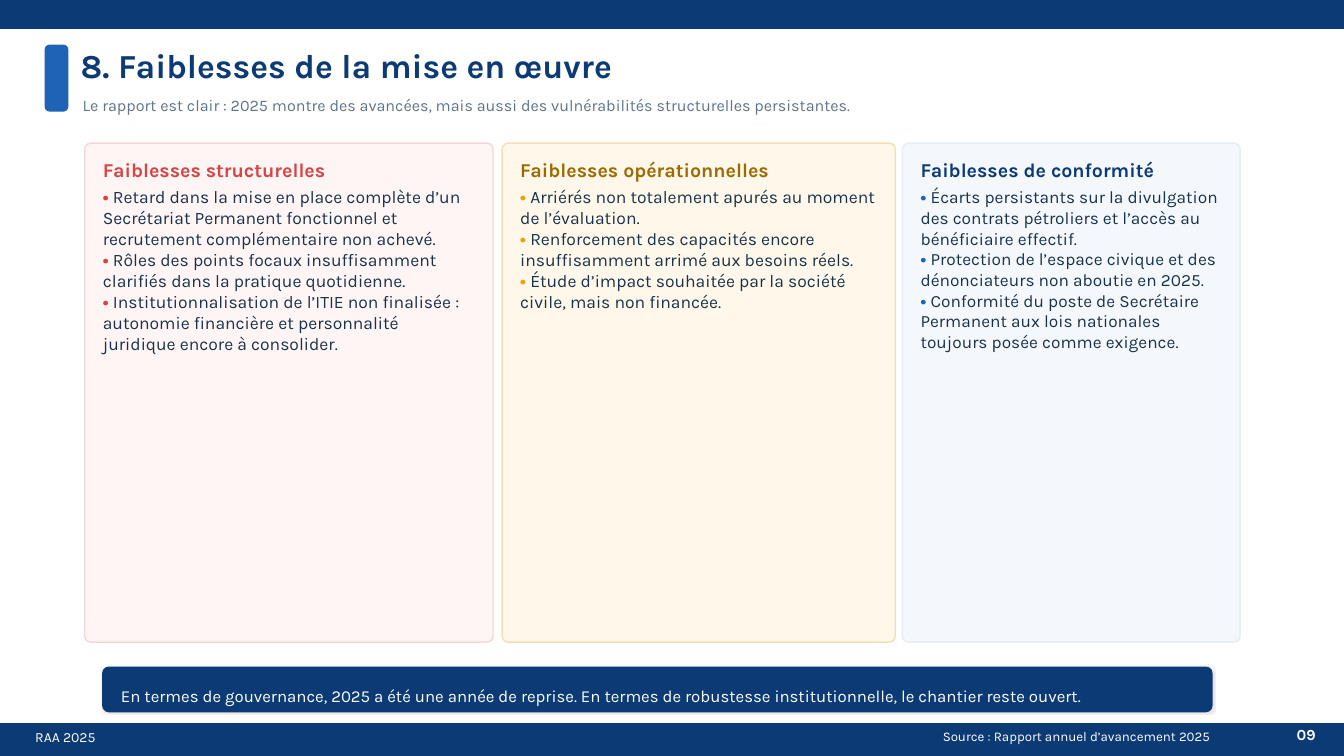
from dataclasses import dataclass

import lxml.etree
import pptx
import pptx.dml.color
import pptx.enum.shapes
import pptx.enum.text
import pptx.oxml.ns
import pptx.util

CELL = pptx.util.Inches(0.1)
COLUMNS, ROWS = 133.3, 75
PADDING = 1.8
CARD_TOP, CARD_ROWS = 14.2, 49.5
CORNER = 0.6
FONT = "Karla"

COLORS = {
    "navy": "0B3A74",
    "blue": "1E63B5",
    "white": "FFFFFF",
    "slate": "5E748B",
    "ink": "18324A",
    "red": "D64545",
    "rose": "FFF5F5",
    "rose_edge": "F5D7D7",
    "brown": "9C6A00",
    "amber": "F29F05",
    "cream": "FFF8EA",
    "cream_edge": "F2E0B3",
    "ice": "F4F8FD",
    "ice_edge": "E6EDF5",
}


@dataclass(frozen=True)
class Area:
    column: float
    row: float
    columns: float
    rows: float

    def emu(self) -> list[int]:
        return [round(n * CELL) for n in (self.column, self.row, self.columns, self.rows)]


@dataclass(frozen=True)
class Card:
    column: float
    columns: float
    heading: str
    points: tuple[str, ...]
    heading_color: str
    bullet_color: str
    fill: str
    edge: str
    size: float = 12.5


CARDS = (
    Card(8.4, 40.5, "Faiblesses structurelles", (
        "Retard dans la mise en place complète d’un Secrétariat Permanent fonctionnel "
        "et recrutement complémentaire non achevé.",
        "Rôles des points focaux insuffisamment clarifiés dans la pratique quotidienne.",
        "Institutionnalisation de l’ITIE non finalisée : autonomie financière et "
        "personnalité juridique encore à consolider.",
    ), "red", "red", "rose", "rose_edge"),
    Card(49.8, 39, "Faiblesses opérationnelles", (
        "Arriérés non totalement apurés au moment de l’évaluation.",
        "Renforcement des capacités encore insuffisamment arrimé aux besoins réels.",
        "Étude d’impact souhaitée par la société civile, mais non financée.",
    ), "brown", "amber", "cream", "cream_edge"),
    Card(89.5, 33.5, "Faiblesses de conformité", (
        "Écarts persistants sur la divulgation des contrats pétroliers et l’accès au "
        "bénéficiaire effectif.",
        "Protection de l’espace civique et des dénonciateurs non aboutie en 2025.",
        "Conformité du poste de Secrétaire Permanent aux lois nationales toujours posée "
        "comme exigence.",
    ), "navy", "blue", "ice", "ice_edge", 12.3),
)


def rgb(name: str) -> pptx.dml.color.RGBColor:
    return pptx.dml.color.RGBColor.from_string(COLORS[name])


def add_panel(slide, area: Area, fill: str, edge: str = "", corner: float = 0):
    kinds = pptx.enum.shapes.MSO_SHAPE
    panel = slide.shapes.add_shape(
        kinds.ROUNDED_RECTANGLE if corner else kinds.RECTANGLE, *area.emu())
    if corner:
        panel.adjustments[0] = corner / min(area.columns, area.rows)
    panel.shadow.inherit = False
    panel.fill.solid()
    panel.fill.fore_color.rgb = rgb(fill)
    panel.line.color.rgb = rgb(edge or fill)
    panel.line.width = pptx.util.Pt(1)
    return panel


def add_soft_shadow(panel) -> None:
    qn = pptx.oxml.ns.qn
    effects = panel._element.spPr.find(qn("a:effectLst"))
    shadow = lxml.etree.SubElement(
        effects, qn("a:outerShdw"), blurRad=str(pptx.util.Pt(1.5)),
        dist=str(pptx.util.Pt(0.5)), dir=str(45 * 60000), rotWithShape="0")
    tint = lxml.etree.SubElement(shadow, qn("a:srgbClr"), val="000000")
    lxml.etree.SubElement(tint, qn("a:alpha"), val="12000")


def add_text(slide, area: Area, *lines: str, size: float, color: str, bold: bool = False,
             right: bool = False, middle: bool = True, bullet: str = "") -> None:
    frame = slide.shapes.add_textbox(*area.emu()).text_frame
    frame.word_wrap = True
    frame.margin_left = frame.margin_right = frame.margin_top = frame.margin_bottom = 0
    anchors = pptx.enum.text.MSO_ANCHOR
    frame.vertical_anchor = anchors.MIDDLE if middle else anchors.TOP
    for index, line in enumerate(lines):
        paragraph = frame.add_paragraph() if index else frame.paragraphs[0]
        if right:
            paragraph.alignment = pptx.enum.text.PP_ALIGN.RIGHT
        parts = [("• ", bullet, True)] if bullet else []
        for words, tone, heavy in parts + [(line, color, bold)]:
            run = paragraph.add_run()
            run.text = words
            run.font.name = FONT
            run.font.size = pptx.util.Pt(size)
            run.font.bold = heavy
            run.font.color.rgb = rgb(tone)


def add_card(slide, card: Card) -> None:
    add_panel(slide, Area(card.column, CARD_TOP, card.columns, CARD_ROWS),
              card.fill, card.edge, CORNER)
    left, width = card.column + PADDING, card.columns - 2 * PADDING
    add_text(slide, Area(left, CARD_TOP + 1.2, width, 2.8), card.heading,
             size=14, color=card.heading_color, bold=True)
    add_text(slide, Area(left, CARD_TOP + 4.3, width, 44), *card.points,
             size=card.size, color="ink", middle=False, bullet=card.bullet_color)


def main() -> None:
    deck = pptx.Presentation()
    deck.slide_width = round(COLUMNS * CELL)
    deck.slide_height = ROWS * CELL
    slide = deck.slides.add_slide(deck.slide_layouts[6])

    add_panel(slide, Area(0, 0, COLUMNS, 2.8), "navy")
    add_panel(slide, Area(0, ROWS - 3.2, COLUMNS, 3.2), "navy")
    add_text(slide, Area(3.5, 72.2, 38, 1.8), "RAA 2025", size=10, color="white")
    add_text(slide, Area(126, 71.8, 4.5, 2.2), "09",
             size=11, color="white", bold=True, right=True)
    add_text(slide, Area(84, 72.2, 36, 1.6), "Source : Rapport annuel d’avancement 2025",
             size=9.5, color="white", right=True)

    add_panel(slide, Area(4.5, 4.5, 2.2, 6.5), "blue", corner=0.4)
    add_text(slide, Area(8, 4.2, 96, 4.5), "8. Faiblesses de la mise en œuvre",
             size=24, color="navy", bold=True)
    add_text(slide, Area(8.2, 9, 112, 2.8),
             "Le rapport est clair : 2025 montre des avancées, mais aussi des "
             "vulnérabilités structurelles persistantes.", size=11.5, color="slate")

    for card in CARDS:
        add_card(slide, card)

    banner = Area(10.2, 66.2, 110, 4.4)
    add_soft_shadow(add_panel(slide, banner, "navy", corner=CORNER))
    add_text(slide, Area(banner.column + PADDING, banner.row + PADDING,
                         banner.columns - 2 * PADDING, 1.4),
             "En termes de gouvernance, 2025 a été une année de reprise. En termes de "
             "robustesse institutionnelle, le chantier reste ouvert.",
             size=12, color="white", middle=False)

    deck.save("out.pptx")


if __name__ == "__main__":
    main()
